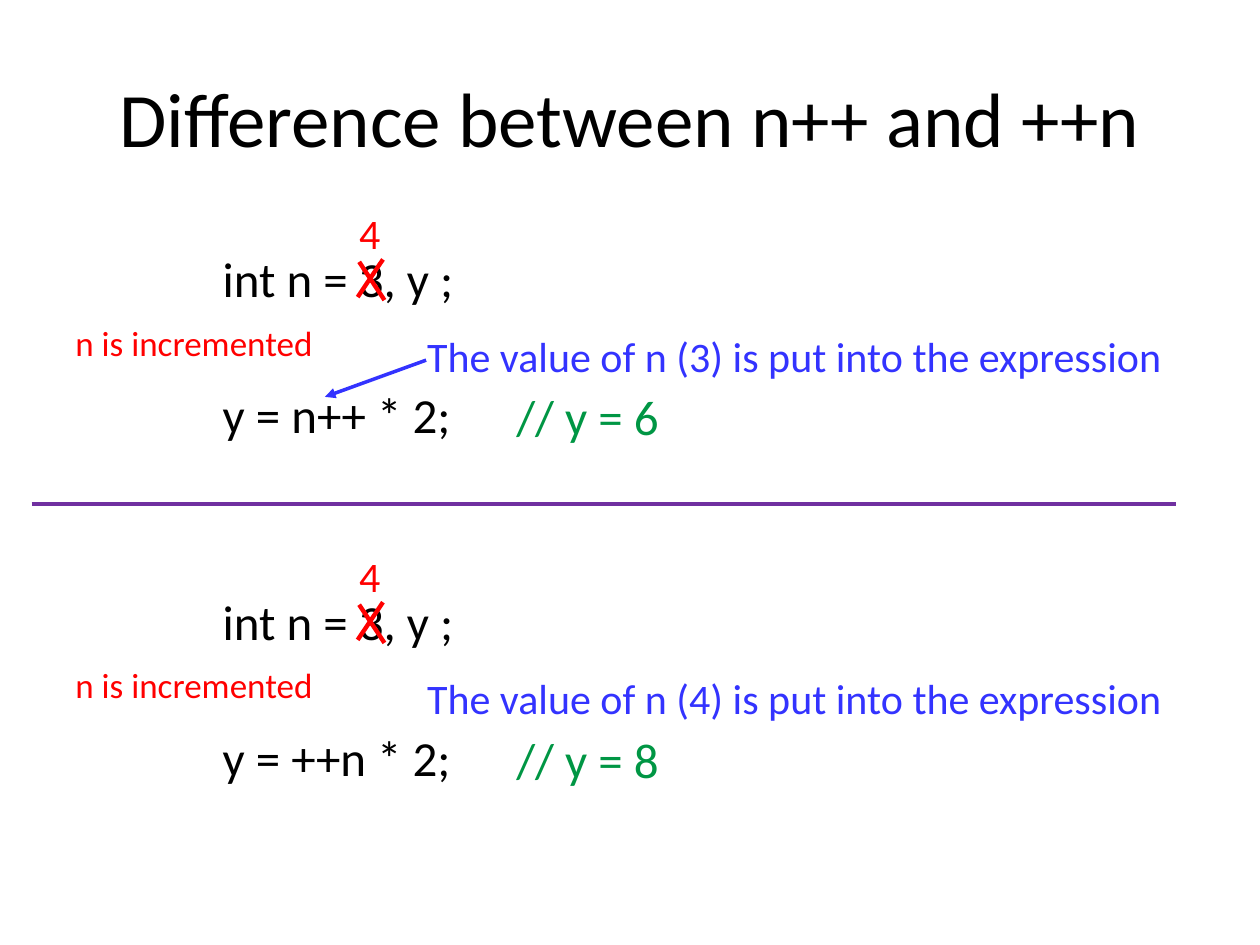
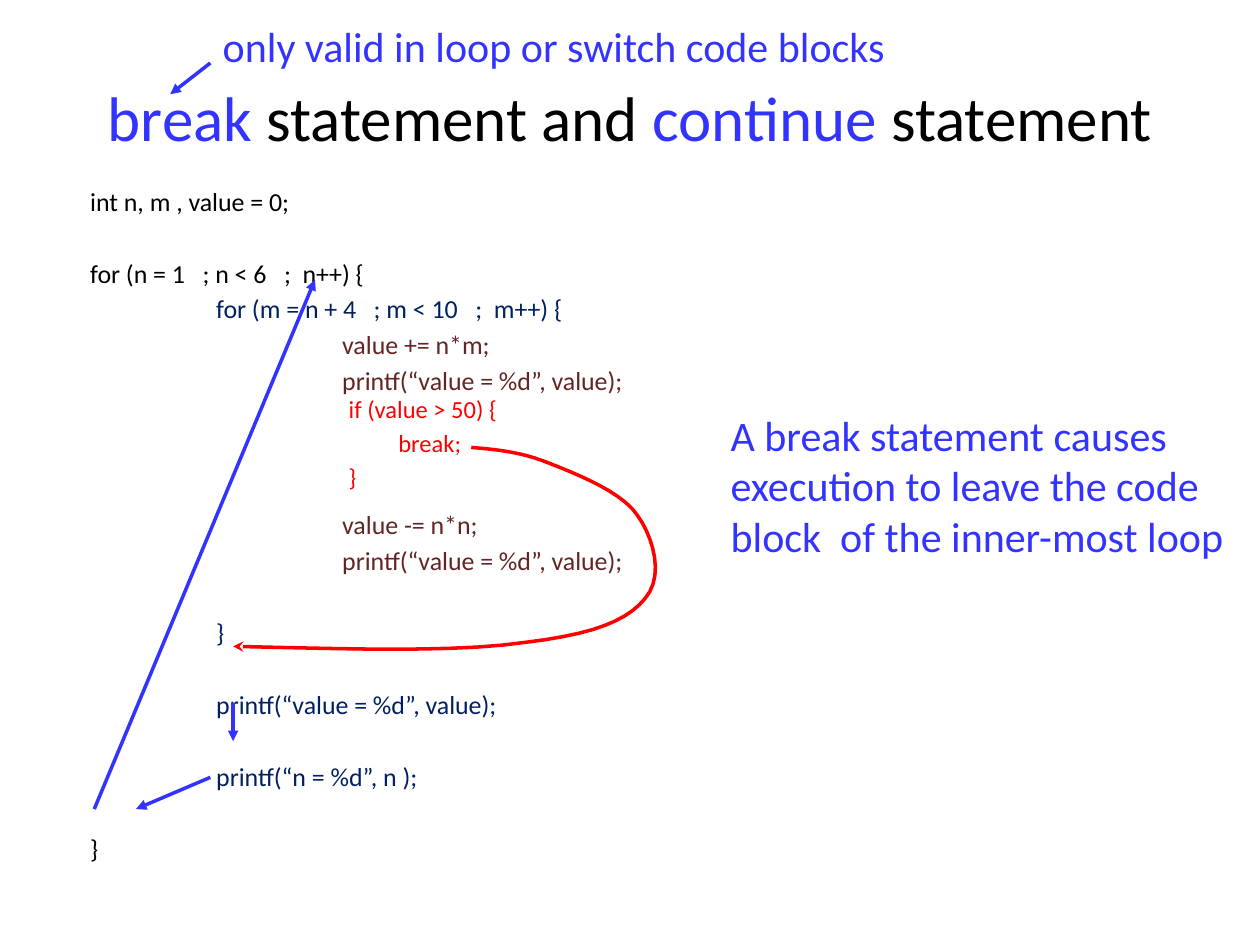
from dataclasses import dataclass

from lxml.etree import SubElement
from pptx import Presentation
from pptx.dml.color import RGBColor
from pptx.enum.shapes import MSO_CONNECTOR as Connector
from pptx.enum.text import MSO_ANCHOR as Anchor, PP_ALIGN as Align
from pptx.oxml.ns import qn
from pptx.util import Cm, Pt

COLOURS = {
    "black": "000000",
    "red": "FF0000",
    "blue": "3333FF",
    "green": "009644",
    "purple": "7030A0",
    "navy": "002060",
    "brown": "632523",
}
FONT = "Calibri"
SPACE_BEFORE = 0.18
LINE_PITCH = 1.4
TAB = 2.54
BLOCK_STEP = 6.91
CURVE_STEPS = 10


@dataclass
class Line:
    text: str
    colour: str = ""
    indent: float = 0
    gap: int = 0


def rgb(name):
    return RGBColor.from_string(COLOURS[name])


def write_text(frame, lines, size=24, colour="black", align=Align.LEFT):
    for index, line in enumerate(lines):
        paragraph = frame.add_paragraph() if index else frame.paragraphs[0]
        paragraph.alignment = align
        paragraph.space_before = Pt(round(size * (SPACE_BEFORE + LINE_PITCH * line.gap), 1))
        if line.indent:
            properties = paragraph._p.get_or_add_pPr()
            properties.set("marL", str(Cm(line.indent)))
            properties.set("indent", "0")
        add_run(paragraph, line.text, size, line.colour or colour)


def add_run(paragraph, text, size, colour):
    run = paragraph.add_run()
    run.text = text
    run.font.name = FONT
    run.font.size = Pt(size)
    run.font.color.rgb = rgb(colour)


def add_arrowhead(shape, kind):
    outline = shape._element.spPr.find(qn("a:ln"))
    SubElement(outline, qn("a:tailEnd"), type=kind)


def curve_points(points):
    for start in range(0, len(points) - 1, 3):
        segment = points[start:start + 4]
        for step in range(1, CURVE_STEPS + 1):
            t = step / CURVE_STEPS
            weights = ((1 - t) ** 3, 3 * t * (1 - t) ** 2, 3 * t ** 2 * (1 - t), t ** 3)
            yield tuple(
                Cm(sum(weight * point[axis] for weight, point in zip(weights, segment)))
                for axis in (0, 1)
            )


class Deck:
    def __init__(self):
        self.presentation = Presentation()
        self.presentation.slide_width = Cm(25.4)
        self.presentation.slide_height = Cm(19.05)
        self.slide = None

    def new_slide(self):
        self.slide = self.presentation.slides.add_slide(self.presentation.slide_layouts[6])

    def text(self, box, lines, **style):
        frame = self.slide.shapes.add_textbox(*map(Cm, box)).text_frame
        frame.word_wrap = True
        if isinstance(lines, str):
            lines = [Line(lines)]
        write_text(frame, lines, **style)
        return frame

    def title(self, runs, size):
        frame = self.text((1.27, 0.76, 22.86, 3.18), [], size=size)
        frame.vertical_anchor = Anchor.MIDDLE
        paragraph = frame.paragraphs[0]
        paragraph.alignment = Align.CENTER
        for text, colour in runs:
            add_run(paragraph, text, size, colour)

    def line(self, start, end, colour="blue", width=2, head=None):
        connector = self.slide.shapes.add_connector(
            Connector.STRAIGHT, *map(Cm, start + end))
        connector.line.color.rgb = rgb(colour)
        connector.line.width = Pt(width)
        if head:
            add_arrowhead(connector, head)
        SubElement(connector._element.spPr, qn("a:effectLst"))

    def arrow(self, start, end):
        self.line(start, end, head="triangle")

    def curve(self, points, colour):
        builder = self.slide.shapes.build_freeform(*map(Cm, points[0]))
        builder.add_line_segments(list(curve_points(points)), close=False)
        shape = builder.convert_to_shape()
        shape.shadow.inherit = False
        shape.fill.background()
        shape.line.color.rgb = rgb(colour)
        shape.line.width = Pt(2)
        add_arrowhead(shape, "stealth")


def increment_example(deck, top, expression, value, result):
    deck.text((4.24, top + 0.82, 18.42, 4.65),
              [Line("int n = 3, y ;"), Line(f"y = {expression} * 2;", gap=1)], size=28)
    deck.text((1.27, top + 2.29, 5.5, 1.27), "n is incremented", size=20, colour="red")
    deck.text((8.36, top + 2.47, 16.6, 1.47),
              f"The value of n ({value}) is put into the expression", colour="blue")
    deck.line((7.24, top + 1.22), (7.75, top + 1.99), "red", 2.5)
    deck.line((7.21, top + 1.93), (7.72, top + 1.17), "red", 2.5)
    deck.text((6.99, top, 1, 1.12), "4", colour="red")
    deck.text((10.16, top + 3.61, 6.25, 1.68), f"// y = {result}", size=28, colour="green")


def increment_slide(deck):
    deck.new_slide()
    deck.title([("Difference between n++ and ++n", "black")], 44)
    top = 4.06
    increment_example(deck, top, "n++", 3, 6)
    deck.arrow((8.59, 7.26), (6.55, 8))
    increment_example(deck, top + BLOCK_STEP, "++n", 4, 8)
    deck.line((0.64, 10.16), (23.7, 10.16), "purple")


def break_slide(deck):
    deck.new_slide()
    deck.title([("break", "blue"), (" statement and ", "black"),
                ("continue", "blue"), (" statement", "black")], 36)
    print_value = "printf(“value = %d”, value);"
    deck.text((1.57, 3.61, 21.9, 13.77), [
        Line("int n, m , value = 0;"),
        Line("for (n = 1   ; n < 6   ;  n++) {", gap=1),
        Line("for (m = n + 4   ; m < 10   ;  m++) {", "navy", TAB),
        Line("value += n*m;", "brown", 2 * TAB),
        Line(print_value, "brown", 2 * TAB),
        Line("value -= n*n;", "brown", 2 * TAB, gap=3),
        Line(print_value, "brown", 2 * TAB),
        Line("}", "navy", TAB, gap=1),
        Line(print_value, "navy", TAB, gap=1),
        Line("printf(“n = %d”, n );", "navy", TAB, gap=1),
        Line("}", gap=1),
    ], size=14.8)
    deck.text((6.78, 7.82, 4.88, 2.54),
              [Line("if (value > 50) {"), Line("break;", indent=1), Line("}")],
              size=14, colour="red")
    deck.text((4.24, 0.28, 14.4, 1.27), "only valid in loop or switch code blocks",
              colour="blue")
    deck.text((14.48, 8.13, 10.64, 3.6),
              "A break statement causes execution to leave the code block  of the inner-most loop",
              colour="blue")
    deck.arrow((4.24, 1.27), (3.43, 1.9))
    deck.curve([
        (9.5, 9.02), (10.08, 9.07), (10.54, 9.12), (11.1, 9.35),
        (11.68, 9.58), (12.55, 9.93), (12.85, 10.39),
        (13.18, 10.85), (13.39, 11.63), (13, 12.07),
        (12.65, 12.5), (12.01, 12.78), (10.59, 12.95),
        (9.14, 13.16), (6.93, 13.08), (4.7, 13.03),
    ], "red")
    deck.arrow((4.7, 14.17), (4.7, 14.94))
    deck.arrow((4.24, 15.67), (2.74, 16.31))
    deck.arrow((1.9, 16.31), (6.35, 5.64))


def main():
    deck = Deck()
    increment_slide(deck)
    break_slide(deck)
    deck.presentation.save("out.pptx")


if __name__ == "__main__":
    main()
